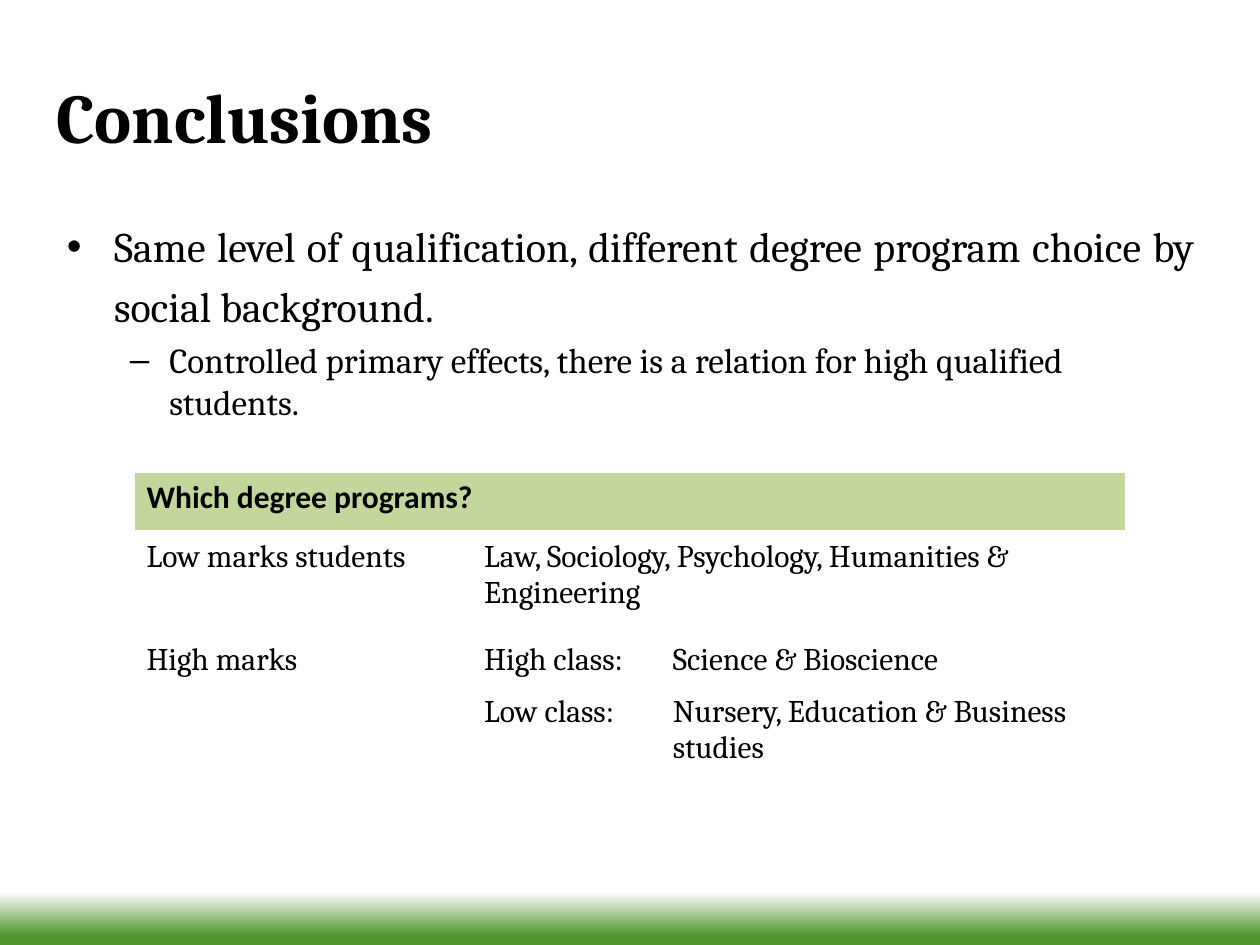
from lxml import etree
from pptx import Presentation
from pptx.dml.color import RGBColor
from pptx.enum.shapes import MSO_SHAPE
from pptx.enum.text import MSO_ANCHOR, MSO_AUTO_SIZE, PP_ALIGN
from pptx.oxml.ns import qn
from pptx.util import Pt

BLACK = RGBColor(0, 0, 0)
WHITE = RGBColor(0xFF, 0xFF, 0xFF)
GREEN = RGBColor(0x4F, 0x95, 0x2B)
LIGHT_GREEN = RGBColor(0xC3, 0xD6, 0x9B)


def add_run(p, text, size, font="Cambria", bold=False):
    r = p.add_run()
    r.text = text
    r.font.size, r.font.name, r.font.bold = Pt(size), font, bold
    r.font.color.rgb = BLACK


def set_borders(cell, bottom):
    """Draw white borders, with the bottom width given in points."""
    tcPr = cell._tc.get_or_add_tcPr()
    for i, (tag, width) in enumerate(
        (("a:lnL", 1), ("a:lnR", 1), ("a:lnT", 1), ("a:lnB", bottom))
    ):
        ln = etree.Element(qn(tag), w=str(Pt(width)))
        fill = etree.SubElement(ln, qn("a:solidFill"))
        etree.SubElement(fill, qn("a:srgbClr"), val=str(WHITE))
        tcPr.insert(i, ln)


prs = Presentation()
prs.slide_width, prs.slide_height = Pt(720), Pt(540)
s = prs.slides.add_slide(prs.slide_layouts[1])

# Footer band
band = s.shapes.add_shape(MSO_SHAPE.RECTANGLE, Pt(0), Pt(508.5), Pt(720), Pt(31.5))
band.shadow.inherit = False
band.line.fill.background()
band.fill.gradient()
band.fill.gradient_angle = 90
for stop, position, color in zip(band.fill.gradient_stops, (0.17, 0.96), (GREEN, WHITE)):
    stop.position = position
    stop.color.rgb = color

# Title
title = s.shapes.title
title.left, title.top, title.width, title.height = Pt(25.2), Pt(20.9), Pt(648), Pt(90)
tf = title.text_frame
tf.auto_size = MSO_AUTO_SIZE.NONE
tf.vertical_anchor = MSO_ANCHOR.MIDDLE
p = tf.paragraphs[0]
p.alignment = PP_ALIGN.LEFT
add_run(p, "Conclusions", 40, bold=True)

# Bullets
body = s.placeholders[1]
body.left, body.top, body.width, body.height = Pt(31), Pt(116.6), Pt(658.8), Pt(368.6)
tf = body.text_frame
tf.auto_size = MSO_AUTO_SIZE.NONE
p = tf.paragraphs[0]
p.alignment = PP_ALIGN.JUSTIFY
p.line_spacing = 1.2
p.space_before = Pt(0)
add_run(p, "Same level of qualification, different degree program choice by "
           "social background.", 24)
p = tf.add_paragraph()
p.level = 1
add_run(p, "Controlled primary effects, there is a relation for high qualified "
           "students.", 20)

# Degree programs table
rows = [
    ("Which degree programs?", "", ""),
    ("Low marks students", "Law, Sociology, Psychology, Humanities & Engineering", ""),
    ("High marks", "High class:", "Science & Bioscience"),
    ("", "Low class:", "Nursery, Education & Business studies"),
]
col_widths = (192.9, 107.8, 266.1)
row_heights = (34.3, 59, 29.5, 50.5)
frame = s.shapes.add_table(len(rows), len(col_widths), Pt(76.6), Pt(270),
                           Pt(sum(col_widths)), Pt(sum(row_heights)))
table = frame.table
table.first_row = table.horz_banding = False
for col, width in zip(table.columns, col_widths):
    col.width = Pt(width)
for row, height in zip(table.rows, row_heights):
    row.height = Pt(height)
table.cell(0, 0).merge(table.cell(0, 2))
table.cell(1, 1).merge(table.cell(1, 2))
table.cell(2, 0).merge(table.cell(3, 0))

for i, texts in enumerate(rows):
    header = i == 0
    for j, text in enumerate(texts):
        cell = table.cell(i, j)
        if header:
            cell.fill.solid()
            cell.fill.fore_color.rgb = LIGHT_GREEN
        else:
            cell.fill.background()
        set_borders(cell, bottom=3 if header else 1)
        if text:
            add_run(cell.text_frame.paragraphs[0], text, 18,
                    "Calibri" if header else "Cambria", header)

prs.save("out.pptx")
